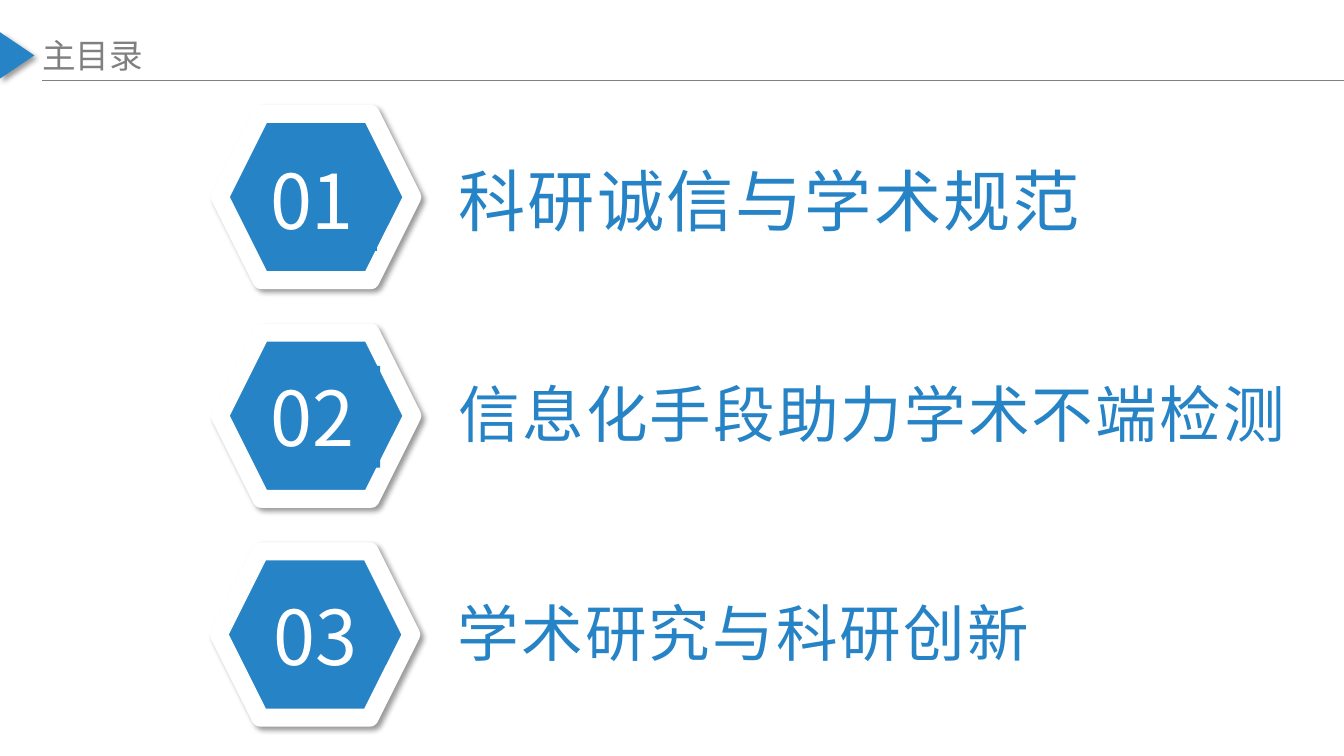
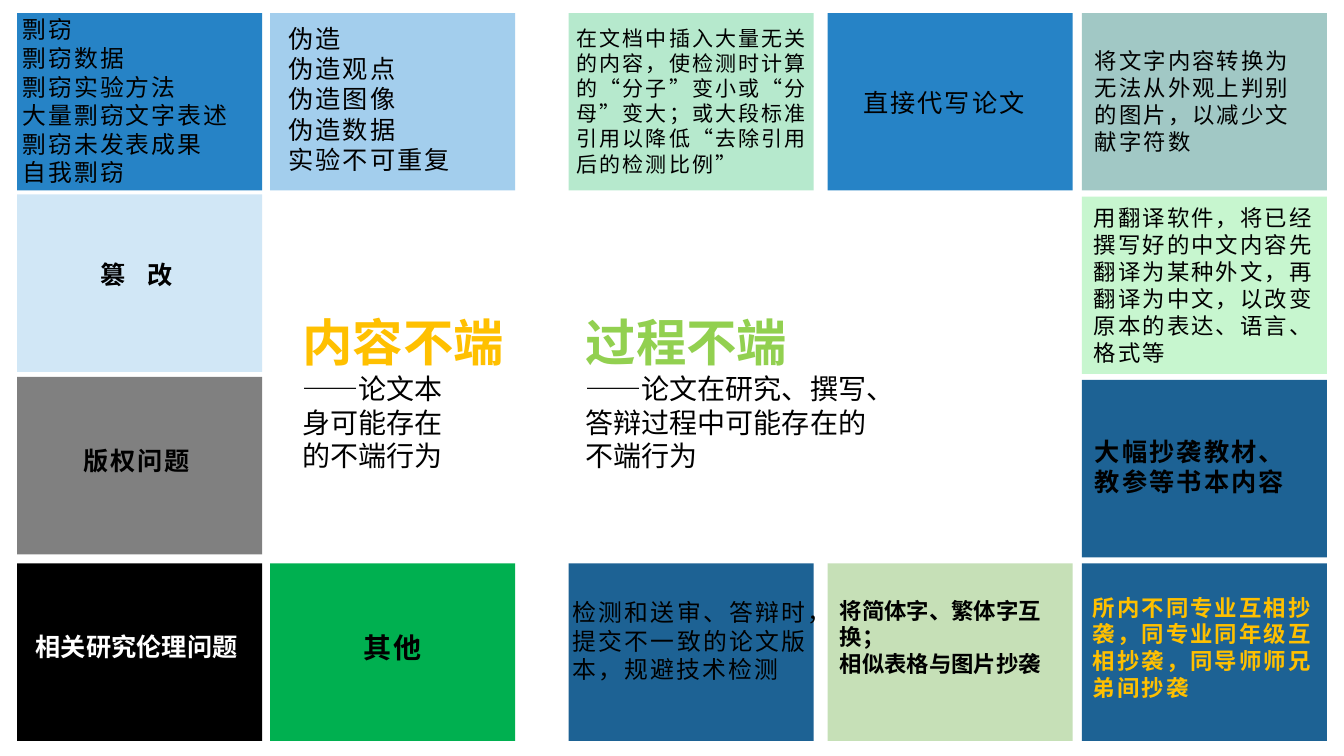
from dataclasses import dataclass, replace
from typing import Optional

import pptx
import pptx.dml.color
import pptx.enum.shapes
import pptx.enum.text
import pptx.oxml
import pptx.oxml.ns
import pptx.util

Inches = pptx.util.Inches
Pt = pptx.util.Pt
Kind = pptx.enum.shapes.MSO_SHAPE
Align = pptx.enum.text.PP_ALIGN
Anchor = pptx.enum.text.MSO_ANCHOR
Fit = pptx.enum.text.MSO_AUTO_SIZE
Box = tuple[float, float, float, float]


# Shared look
@dataclass(frozen=True)
class Theme:
    font: str = "Noto Sans CJK SC"
    blue: str = "2683C6"
    navy: str = "1D6294"
    gray: str = "808080"
    white: str = "FFFFFF"
    black: str = "000000"
    gold: str = "FFC000"
    lime: str = "92D050"
    sky: str = "A3CEED"
    pale: str = "D1E7F6"
    teal: str = "A1C8C5"
    mint: str = "B6E9CD"
    fresh: str = "C7F6CF"
    green: str = "00B050"
    sage: str = "C6E0B7"
    title: int = 24
    number: int = 54
    entry: int = 48
    long: int = 44
    head: int = 36
    lead: int = 20
    label: int = 18
    body: int = 17
    small: int = 16
    tiny: int = 15
    track: float = 1.5


THEME = Theme()


@dataclass(frozen=True)
class Style:
    size: int
    color: str = THEME.black
    bold: bool = False
    track: float = 0
    align: Optional[Align] = None


@dataclass(frozen=True)
class Entry:
    number: str
    text: str
    hexa: tuple[float, float]
    plate: Box
    area: Box
    size: int


@dataclass(frozen=True)
class Tile:
    col: int
    row: int
    color: str
    area: Box
    lines: tuple[str, ...]
    style: Style
    lift: float = 0


@dataclass(frozen=True)
class Topic:
    area: Box
    head: str
    color: str
    lines: tuple[str, ...]


# Helpers
def rgb(color: str) -> pptx.dml.color.RGBColor:
    return pptx.dml.color.RGBColor.from_string(color)


def inches(box: Box) -> list:
    return [Inches(side) for side in box]


def format_line(para, style: Style) -> None:
    if style.align is not None:
        para.alignment = style.align
    for run in para.runs:
        font = run.font
        font.size, font.bold, font.name = Pt(style.size), style.bold, THEME.font
        font.color.rgb = rgb(style.color)
        props = run._r.get_or_add_rPr()
        if style.track:
            props.set("spc", str(round(style.track * 100)))
        east = props.makeelement(pptx.oxml.ns.qn("a:ea"), {"typeface": THEME.font})
        props.find(pptx.oxml.ns.qn("a:latin")).addnext(east)


def write(shape, lines: tuple[str, ...], style: Style, wrap: bool = False,
          grow: bool = True, inset: bool = True) -> None:
    frame = shape.text_frame
    frame.word_wrap = wrap
    frame.auto_size = Fit.SHAPE_TO_FIT_TEXT if grow else Fit.NONE
    frame.vertical_anchor = Anchor.TOP
    if not inset:
        frame.margin_left = frame.margin_right = 0
        frame.margin_top = frame.margin_bottom = 0
    frame.text = "\n".join(lines)
    for para in frame.paragraphs:
        format_line(para, style)


def add_shape(slide, kind: Kind, box: Box, color: str):
    shape = slide.shapes.add_shape(kind, *inches(box))
    shape.shadow.inherit = False
    shape.fill.solid()
    shape.fill.fore_color.rgb = rgb(color)
    shape.line.fill.background()
    return shape


def add_shadow(shape) -> None:
    props = shape._element.spPr
    old = props.find(pptx.oxml.ns.qn("a:effectLst"))
    new = pptx.oxml.parse_xml(
        f'<a:effectLst {pptx.oxml.ns.nsdecls("a")}>'
        f'<a:outerShdw blurRad="{Pt(4)}" dist="{Pt(3)}" dir="2700000" '
        'algn="tl" rotWithShape="0"><a:srgbClr val="000000">'
        '<a:alpha val="40000"/></a:srgbClr></a:outerShdw></a:effectLst>')
    props.replace(old, new)


def add_rule(slide, left: float, right: float, top: float) -> None:
    rule = slide.shapes.add_connector(
        pptx.enum.shapes.MSO_CONNECTOR.STRAIGHT,
        *inches((left, top, right, top)))
    rule.line.color.rgb = rgb(THEME.gray)
    rule.line.width = Pt(0.75)
    props = rule._element.spPr
    props.append(props.makeelement(pptx.oxml.ns.qn("a:effectLst"), {}))


# Contents slide
ENTRIES = (
    Entry("01", "科研诚信与学术规范", (2.18, 1.13), (2.58, 1.48, 1.16, 1.01),
          (4.45, 1.53, 6.39, 0.91), THEME.entry),
    Entry("02", "信息化手段助力学术不端检测", (2.18, 3.3), (2.58, 3.63, 1.19, 1.01),
          (4.45, 3.68, 8.42, 0.84), THEME.long),
    Entry("03", "学术研究与科研创新", (2.17, 5.47), (2.61, 5.8, 1.11, 1.01),
          (4.44, 5.85, 5.89, 0.84), THEME.long),
)


def add_entry(slide, entry: Entry) -> None:
    hexa = add_shape(slide, Kind.HEXAGON, (*entry.hexa, 1.91, 1.65), THEME.blue)
    hexa.line.color.rgb = rgb(THEME.white)
    hexa.line.width = Pt(12.75)
    add_shadow(hexa)
    plate = add_shape(slide, Kind.RECTANGLE, entry.plate, THEME.blue)
    write(plate, (entry.number,),
          Style(THEME.number, THEME.white, align=Align.JUSTIFY))
    label = slide.shapes.add_textbox(*inches(entry.area))
    write(label, (entry.text,),
          Style(entry.size, THEME.blue, track=THEME.track))


def build_contents(deck) -> None:
    slide = deck.slides.add_slide(deck.slide_layouts[5])
    title = slide.shapes.title
    title.left, title.top, title.width, title.height = inches((0.32, 0.3, 2.4, 0.5))
    write(title, ("主目录",), Style(THEME.title, THEME.gray, align=Align.LEFT),
          wrap=True, grow=False)
    add_rule(slide, 0.42, 13.33, 0.8)
    mark = add_shape(slide, Kind.ISOSCELES_TRIANGLE, (-0.06, 0.38, 0.46, 0.34),
                     THEME.blue)
    mark.rotation = 90
    add_shadow(mark)
    for entry in ENTRIES:
        add_entry(slide, entry)


# Misconduct slide
COLS = (0.17, 2.68, 5.64, 8.21, 10.73)
TOP, STEP = 0.13, 1.82
WIDE, HIGH = 2.43, 1.76

TEXT = Style(THEME.small, track=THEME.track)
BODY = replace(TEXT, size=THEME.body)
LABEL = replace(TEXT, size=THEME.label)
STRONG = Style(THEME.label, bold=True, align=Align.CENTER)

TILES = (
    Tile(0, 0, THEME.blue, (0.22, 0.15, 2.34, 1.72),
         ("剽窃", "剽窃数据", "剽窃实验方法", "大量剽窃文字表述",
          "剽窃未发表成果", "自我剽窃"), BODY),
    Tile(1, 0, THEME.sky, (2.86, 0.23, 2.07, 1.51),
         ("伪造", "伪造观点", "伪造图像", "伪造数据", "实验不可重复"), LABEL),
    Tile(2, 0, THEME.mint, (5.72, 0.25, 2.34, 1.51),
         ("在文档中插入大量无关的内容，使检测时计算的“分子”变小或“分母”变大；"
          "或大段标准引用以降低“去除引用后的检测比例”",),
         replace(TEXT, size=THEME.tiny)),
    Tile(3, 0, THEME.blue, (8.56, 0.87, 1.73, 0.3), ("直接代写论文",), LABEL),
    Tile(4, 0, THEME.teal, (10.86, 0.47, 2.17, 1.08),
         ("将文字内容转换为无法从外观上判别的图片，以减少文献字符数",), TEXT),
    Tile(0, 1, THEME.pale, (0.32, 2.57, 2.07, 0.3), ("篡 改",),
         replace(STRONG, track=6), lift=0.02),
    Tile(4, 1, THEME.fresh, (10.85, 2.03, 2.31, 1.62),
         ("用翻译软件，将已经撰写好的中文内容先翻译为某种外文，再翻译为中文，"
          "以改变原本的表达、语言、格式等",), TEXT),
    Tile(0, 2, THEME.gray, (0.32, 4.42, 2.07, 0.3), ("版权问题",),
         replace(STRONG, track=THEME.track), lift=0.03),
    Tile(4, 2, THEME.navy, (10.86, 4.33, 2.1, 0.61),
         ("大幅抄袭教材、教参等书本内容",), replace(LABEL, bold=True)),
    Tile(0, 3, THEME.black, (0.32, 6.26, 2.07, 0.3), ("相关研究伦理问题",),
         replace(STRONG, color=THEME.white)),
    Tile(1, 3, THEME.green, (2.86, 6.26, 2.07, 0.34), ("其他",),
         replace(STRONG, size=THEME.lead, track=1.6)),
    Tile(2, 3, THEME.navy, (5.68, 5.93, 2.33, 0.86),
         ("检测和送审、答辩时，提交不一致的论文版本，规避技术检测",),
         replace(BODY, align=Align.JUSTIFY)),
    Tile(3, 3, THEME.sage, (8.33, 5.92, 2.2, 0.81),
         ("将简体字、繁体字互换；", "相似表格与图片抄袭"),
         Style(THEME.small, bold=True)),
    Tile(4, 3, THEME.navy, (10.84, 5.89, 2.28, 1.08),
         ("所内不同专业互相抄袭，同专业同年级互相抄袭，同导师师兄弟间抄袭",),
         replace(TEXT, color=THEME.gold, bold=True)),
)

TOPICS = (
    Topic((2.9, 2.06, 2.49, 3.65), "内容不端", THEME.gold,
          ("——论文本", "身可能存在", "的不端行为")),
    Topic((5.71, 2.06, 3.99, 3.65), "过程不端", THEME.lime,
          ("——论文在研究、撰写、", "答辩过程中可能存在的", "不端行为")),
)


def add_tile(slide, tile: Tile) -> None:
    top = TOP + tile.row * STEP - tile.lift
    add_shape(slide, Kind.RECTANGLE, (COLS[tile.col], top, WIDE, HIGH), tile.color)
    label = slide.shapes.add_textbox(*inches(tile.area))
    write(label, tile.lines, tile.style, wrap=True, inset=False)


def add_topic(slide, topic: Topic) -> None:
    box = slide.shapes.add_textbox(*inches(topic.area))
    write(box, ("", *topic.lines), Style(THEME.lead), grow=False)
    frame = box.text_frame
    frame.vertical_anchor = Anchor.MIDDLE
    head = frame.paragraphs[0]
    head.text = topic.head
    format_line(head, Style(THEME.head, topic.color, bold=True))


def build_tiles(deck) -> None:
    slide = deck.slides.add_slide(deck.slide_layouts[6])
    for tile in TILES:
        add_tile(slide, tile)
    for topic in TOPICS:
        add_topic(slide, topic)


def main() -> None:
    deck = pptx.Presentation()
    deck.slide_width, deck.slide_height = Inches(13.33), Inches(7.5)
    build_contents(deck)
    build_tiles(deck)
    deck.save("out.pptx")


if __name__ == "__main__":
    main()
